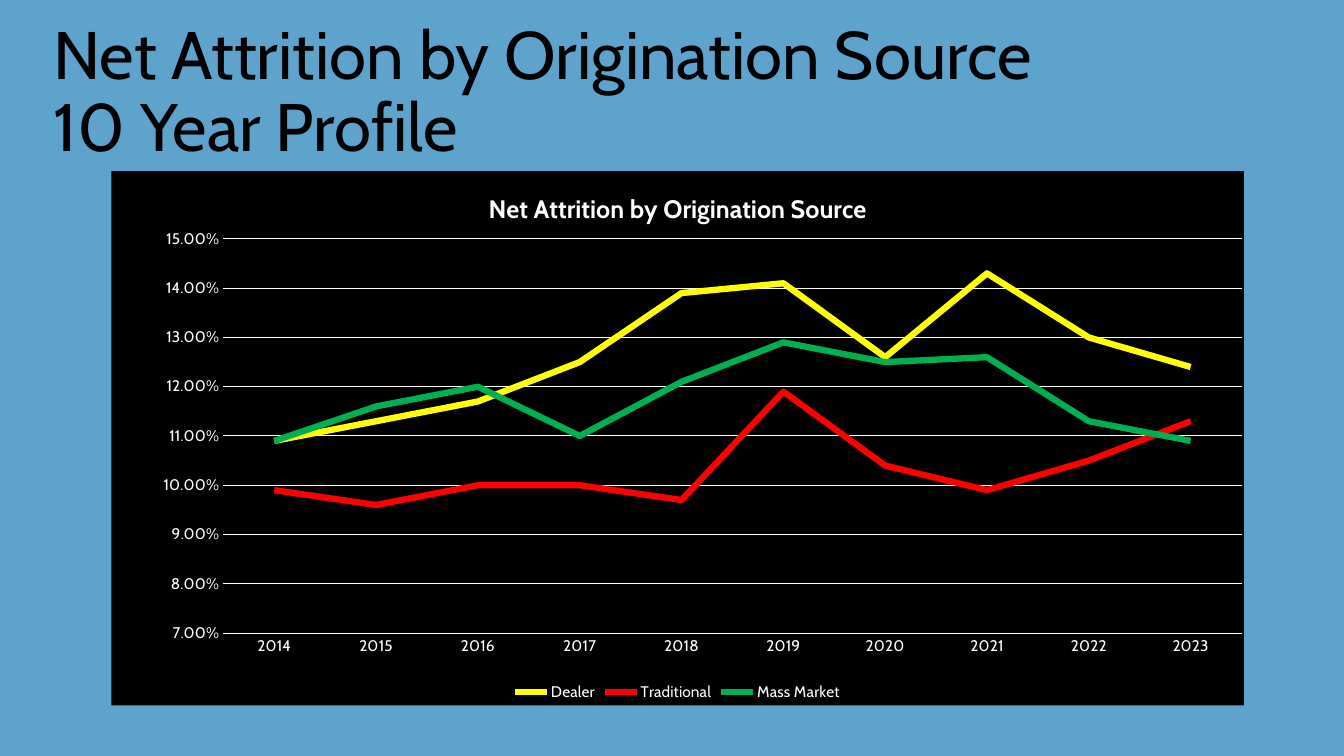
from pptx import Presentation
from pptx import oxml
from pptx.chart import data
from pptx.dml.color import RGBColor
from pptx.enum import chart as kinds, text
from pptx.oxml import ns
from pptx.util import Pt

FONT = "Cabin"
BLUE = RGBColor(0x5D, 0xA3, 0xCC)
BLACK = RGBColor(0, 0, 0)
WHITE = RGBColor(255, 255, 255)
YELLOW = RGBColor(255, 255, 0)
RED = RGBColor(255, 0, 0)
GREEN = RGBColor(0, 0xB0, 0x50)

YEARS = [str(year) for year in range(2014, 2024)]
# Net attrition by origination source
RATES = [
    ("Dealer", YELLOW,
     [0.109, 0.113, 0.117, 0.125, 0.139, 0.141, 0.126, 0.143, 0.13, 0.124]),
    ("Traditional", RED,
     [0.099, 0.096, 0.1, 0.1, 0.097, 0.119, 0.104, 0.099, 0.105, 0.113]),
    ("Mass Market", GREEN,
     [0.109, 0.116, 0.12, 0.11, 0.121, 0.129, 0.125, 0.126, 0.113, 0.109]),
]


def style(font, size, color, bold=False):
    font.name, font.size, font.bold = FONT, Pt(size), bold
    font.color.rgb = color


def fill_xml(color):
    return oxml.parse_xml(
        f'<c:spPr {ns.nsdecls("c", "a")}><a:solidFill><a:srgbClr val="{color}"/>'
        '</a:solidFill><a:ln><a:noFill/></a:ln></c:spPr>')


def add_title(slide, box, lines):
    frame = slide.shapes.add_textbox(*map(Pt, box)).text_frame
    frame.word_wrap = True
    frame.vertical_anchor = text.MSO_ANCHOR.BOTTOM
    para = frame.paragraphs[0]
    para.line_spacing = 0.9
    for i, line in enumerate(lines):
        if i:
            para.add_line_break()
        run = para.add_run()
        run.text = line
        style(run.font, 48, BLACK)


def set_plot(chart, left, top, width, height):
    """Place the inner plot area, in fractions of the chart, on black."""
    plot = chart._chartSpace.chart.plotArea
    for old in plot.findall(ns.qn("c:layout")):
        plot.remove(old)
    sides = "".join(f'<c:{key} val="{val}"/>' for key, val in
                    zip("xywh", (left, top, width, height)))
    plot.insert(0, oxml.parse_xml(
        f'<c:layout {ns.nsdecls("c")}><c:manualLayout>'
        '<c:layoutTarget val="inner"/><c:xMode val="edge"/><c:yMode val="edge"/>'
        f'{sides}</c:manualLayout></c:layout>'))
    plot.append(fill_xml(BLACK))
    chart._chartSpace.chart.addnext(fill_xml(BLACK))


def add_lines(slide, box, name):
    rates = data.CategoryChartData(number_format="0.00%")
    rates.categories = YEARS
    for label, _, vals in RATES:
        rates.add_series(label, vals)
    chart = slide.shapes.add_chart(
        kinds.XL_CHART_TYPE.LINE, *map(Pt, box), rates).chart
    style(chart.font, 10, WHITE)

    # Heading and legend
    chart.has_title = True
    run = chart.chart_title.text_frame.paragraphs[0].add_run()
    run.text = name
    style(run.font, 18, WHITE, True)
    chart.has_legend = True
    chart.legend.position = kinds.XL_LEGEND_POSITION.BOTTOM
    chart.legend.include_in_layout = False
    style(chart.legend.font, 11, WHITE)

    # Axes
    for axis in (chart.category_axis, chart.value_axis):
        axis.major_tick_mark = axis.minor_tick_mark = kinds.XL_TICK_MARK.NONE
        style(axis.tick_labels.font, 11, WHITE)
    chart.category_axis.format.line.color.rgb = WHITE
    rate = chart.value_axis
    rate.minimum_scale, rate.maximum_scale, rate.major_unit = 0.07, 0.15, 0.01
    rate.tick_labels.number_format = "0.00%"
    rate.tick_labels.number_format_is_linked = False
    rate.format.line.fill.background()
    grid = rate.major_gridlines.format.line
    grid.color.rgb, grid.width = WHITE, Pt(0.75)

    # Series
    chart.plots[0].vary_by_categories = False
    for series, (_, color, _) in zip(chart.plots[0].series, RATES):
        series.smooth = False
        series.marker.style = kinds.XL_MARKER_STYLE.NONE
        series.format.line.color.rgb = color
        series.format.line.width = Pt(4.5)
    set_plot(chart, 0.099, 0.127, 0.899, 0.738)


def main():
    deck = Presentation()
    deck.slide_width, deck.slide_height = Pt(960), Pt(540)
    slide = deck.slides.add_slide(deck.slide_layouts[6])
    slide.background.fill.solid()
    slide.background.fill.fore_color.rgb = BLUE
    name = "Net Attrition by Origination Source"
    add_title(slide, (31, 36, 819, 86.4), [name, "10 Year Profile"])
    add_lines(slide, (79.5, 122.2, 809, 381.6), name)
    deck.save("out.pptx")


if __name__ == "__main__":
    main()
